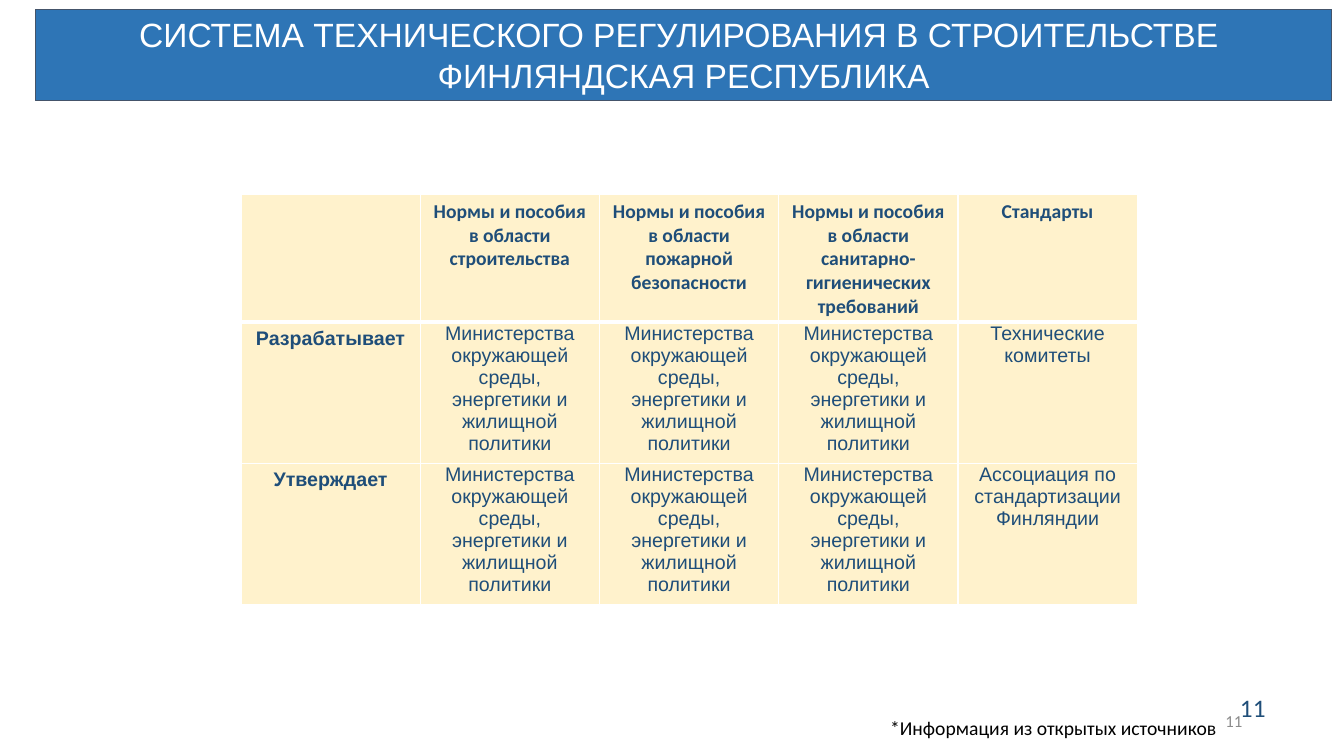
from typing import Any, NamedTuple

from lxml.etree import SubElement
from pptx import Presentation
from pptx.dml.color import RGBColor
from pptx.enum.text import MSO_ANCHOR, MSO_AUTO_SIZE, PP_ALIGN
from pptx.oxml.ns import qn
from pptx.util import Inches, Pt

COLORS = {
    "banner": "2E75B6",
    "banner_line": "44546A",
    "cell": "FFF2CC",
    "navy": "1F4E79",
    "gray": "8C8C8C",
    "black": "000000",
    "white": "FFFFFF",
}


class TextStyle(NamedTuple):
    size: int
    color: str
    name: str = "Calibri"
    bold: bool = False
    align: PP_ALIGN = PP_ALIGN.CENTER


class Note(NamedTuple):
    text: str
    box: tuple[float, float, float, float]
    style: TextStyle
    anchor: MSO_ANCHOR = MSO_ANCHOR.TOP
    fit: MSO_AUTO_SIZE = MSO_AUTO_SIZE.SHAPE_TO_FIT_TEXT


HEADING = TextStyle(24, "white", "Arial")
COLUMN_HEAD = TextStyle(14, "navy", bold=True)
ROW_HEAD = TextStyle(14, "navy", "Arial", bold=True)
BODY = TextStyle(14, "navy", "Arial")

NOTES = [
    Note("11", (9.42, 6.95, 3, 0.4), TextStyle(12, "gray", align=PP_ALIGN.RIGHT),
         MSO_ANCHOR.MIDDLE, MSO_AUTO_SIZE.NONE),
    Note("11", (12.05, 6.82, 0.75, 0.4), TextStyle(18, "navy")),
    Note("*Информация из открытых источников", (8.73, 7.05, 4.66, 0.34),
         TextStyle(14, "black", align=PP_ALIGN.LEFT)),
]

MINISTRY = "Министерства окружающей среды, энергетики и жилищной политики"
REGULATION = [
    ["",
     "Нормы и пособия в области\nстроительства",
     "Нормы и пособия в области\nпожарной безопасности",
     "Нормы и пособия в области\nсанитарно-гигиенических требований",
     "Стандарты"],
    ["Разрабатывает", *[MINISTRY] * 3, "Технические комитеты"],
    ["Утверждает", *[MINISTRY] * 3, "Ассоциация по стандартизации Финляндии"],
]


def rgb(color: str) -> RGBColor:
    return RGBColor.from_string(COLORS[color])


def apply(target: Any, values: dict[str, Any]) -> None:
    for attribute, value in values.items():
        setattr(target, attribute, value)


def write(frame: Any, text: str, style: TextStyle) -> None:
    frame.text = text
    for paragraph in frame.paragraphs:
        apply(paragraph, {"alignment": style.align, "line_spacing": 1.0})
        for run in paragraph.runs:
            apply(run.font, {"size": Pt(style.size), "name": style.name, "bold": style.bold})
            run.font.color.rgb = rgb(style.color)


def place(shape: Any, box: tuple[float, float, float, float]) -> None:
    apply(shape, dict(zip(("left", "top", "width", "height"), map(Inches, box))))


def add_borders(cell: Any, widths: dict[str, int]) -> None:
    properties = cell._tc.get_or_add_tcPr()
    for side, width in widths.items():
        line = SubElement(properties, qn(f"a:ln{side}"), w=str(Pt(width)))
        fill = SubElement(line, qn("a:solidFill"))
        SubElement(fill, qn("a:srgbClr"), val=COLORS["white"])


def add_banner(slide: Any) -> None:
    banner = slide.shapes.title
    place(banner, (0.35, 0.09, 12.86, 0.91))
    banner.fill.solid()
    banner.fill.fore_color.rgb = rgb("banner")
    banner.line.color.rgb = rgb("banner_line")
    banner.line.width = Pt(0.75)
    write(banner.text_frame,
          "СИСТЕМА ТЕХНИЧЕСКОГО РЕГУЛИРОВАНИЯ В СТРОИТЕЛЬСТВЕ \vФИНЛЯНДСКАЯ РЕСПУБЛИКА",
          HEADING)
    apply(banner.text_frame, {
        "word_wrap": True,
        "vertical_anchor": MSO_ANCHOR.TOP,
        "auto_size": MSO_AUTO_SIZE.SHAPE_TO_FIT_TEXT,
    })


def add_regulation_table(slide: Any) -> None:
    box = (2.39, 1.93, 8.89, 3.6)
    holder = slide.shapes.add_table(len(REGULATION), len(REGULATION[0]), *map(Inches, box))
    table = holder.table
    apply(table, {"first_row": False, "horz_banding": False})
    for row_index, row in enumerate(REGULATION):
        # Rows grow from this minimum to hold their text
        table.rows[row_index].height = Inches(0.41)
        for column_index, text in enumerate(row):
            cell = table.cell(row_index, column_index)
            add_borders(cell, {"L": 1, "R": 1,
                               "T": 3 if row_index == 1 else 1,
                               "B": 3 if row_index == 0 else 1})
            cell.fill.solid()
            cell.fill.fore_color.rgb = rgb("cell")
            if row_index == 0:
                style = COLUMN_HEAD
            elif column_index == 0:
                style = ROW_HEAD
            else:
                style = BODY
                apply(cell, {"margin_left": Inches(0.07), "margin_right": Inches(0.07),
                             "margin_top": 0, "margin_bottom": 0})
            write(cell.text_frame, text, style)
    holder.height = Inches(box[3])


def add_note(slide: Any, note: Note) -> None:
    frame = slide.shapes.add_textbox(*map(Inches, note.box)).text_frame
    apply(frame, {"word_wrap": True, "vertical_anchor": note.anchor, "auto_size": note.fit})
    write(frame, note.text, note.style)


def main() -> None:
    deck = Presentation()
    apply(deck, {"slide_width": Inches(13.33), "slide_height": Inches(7.5)})
    slide = deck.slides.add_slide(deck.slide_layouts[5])

    # Page numbers and source note
    for note in NOTES:
        add_note(slide, note)

    # Who develops and approves each kind of document
    add_regulation_table(slide)

    # Heading
    add_banner(slide)
    deck.save("out.pptx")


if __name__ == "__main__":
    main()
